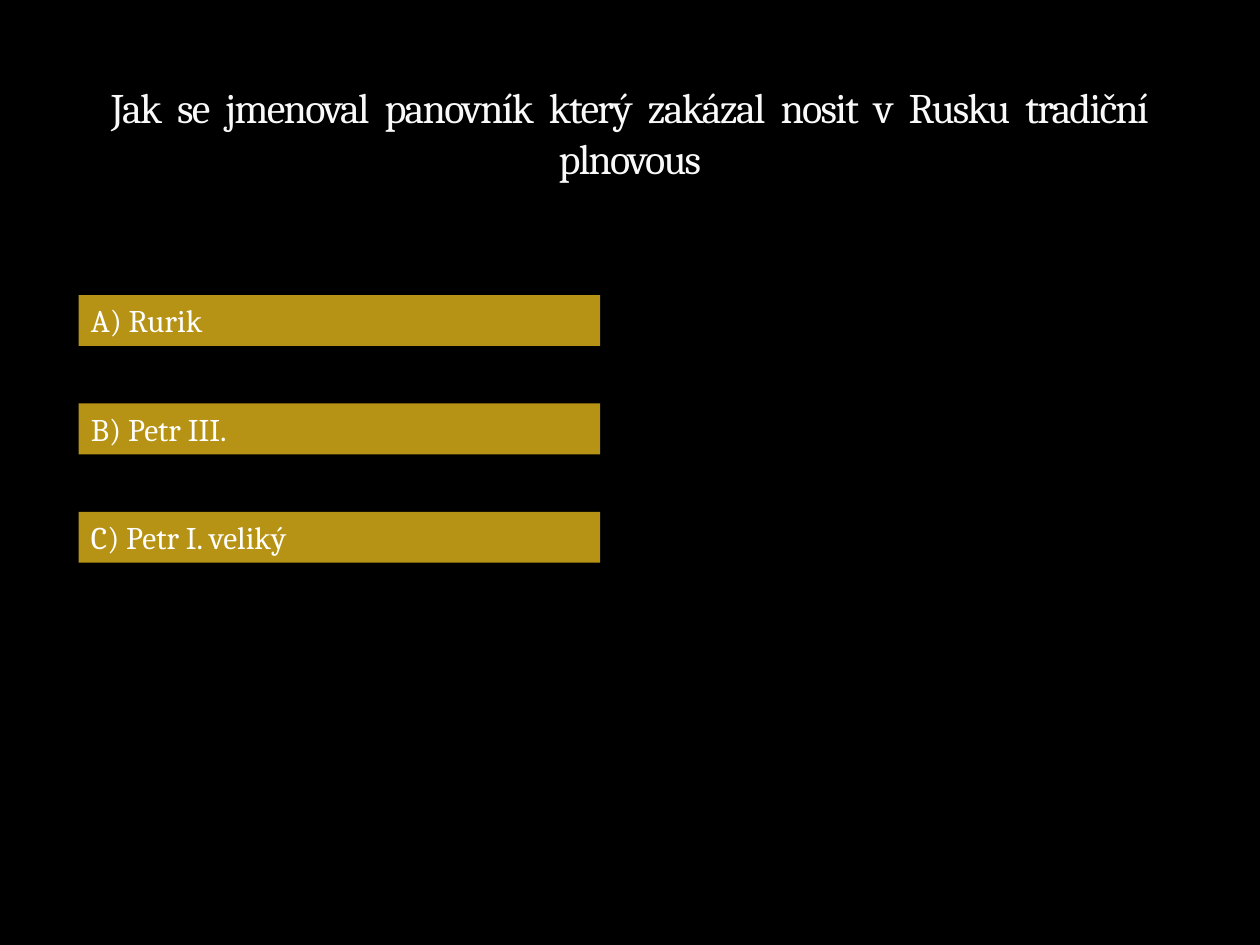
from pptx import Presentation
from pptx.dml.color import RGBColor as RGB
from pptx.enum.shapes import MSO_SHAPE as SHAPE
from pptx.enum.text import MSO_ANCHOR as ANCHOR, PP_ALIGN as ALIGN
from pptx.util import Pt

# Content
TITLE = "Jak se jmenoval panovník který zakázal nosit v Rusku tradiční plnovous"
ANSWERS = ["A) Rurik", "B) Petr III.", "C) Petr I. veliký"]

COLORS = {"back": "000000", "title": "F9F9F9", "bar": "B79315", "text": "FFFFFF"}
FONT = "Cambria"

# Layout in points
TITLE_BOX = (36, 12.24, 648, 95.76)
LEFT, TOP, WIDTH, HEIGHT, STEP = 44.9, 168.6, 298, 29.1, 61.92


def write(shape, text, size, color, align=ALIGN.LEFT, anchor=ANCHOR.MIDDLE,
          track=None, gap=None):
    """Set the text; track spaces the letters, gap widens the word spaces."""
    frame = shape.text_frame
    frame.word_wrap = True
    frame.vertical_anchor = anchor
    para = frame.paragraphs[0]
    para.alignment = align
    parts = [(text, track)]
    if gap is not None:
        parts = []
        for word in text.split():
            parts += [(word, track), (" ", gap)]
        parts.pop()
    for part, space in parts:
        run = para.add_run()
        run.text = part
        run.font.name = FONT
        run.font.size = Pt(size)
        run.font.color.rgb = RGB.from_string(COLORS[color])
        if space is not None:
            run.font._element.set("spc", str(round(space * 100)))


deck = Presentation()
deck.slide_width, deck.slide_height = Pt(720), Pt(540)
slide = deck.slides.add_slide(deck.slide_layouts[6])
slide.background.fill.solid()
slide.background.fill.fore_color.rgb = RGB.from_string(COLORS["back"])

# Question
box = slide.shapes.add_textbox(*map(Pt, TITLE_BOX))
write(box, TITLE, 24, "title", align=ALIGN.CENTER, anchor=ANCHOR.BOTTOM,
      track=-1, gap=3.3)

# Answer bars
for i, answer in enumerate(ANSWERS):
    bar = slide.shapes.add_shape(
        SHAPE.RECTANGLE, Pt(LEFT), Pt(TOP + i * STEP), Pt(WIDTH), Pt(HEIGHT))
    bar.shadow.inherit = False
    bar.fill.solid()
    bar.fill.fore_color.rgb = RGB.from_string(COLORS["bar"])
    bar.line.fill.background()
    write(bar, answer, 18, "text", anchor=ANCHOR.TOP)

deck.save("out.pptx")
